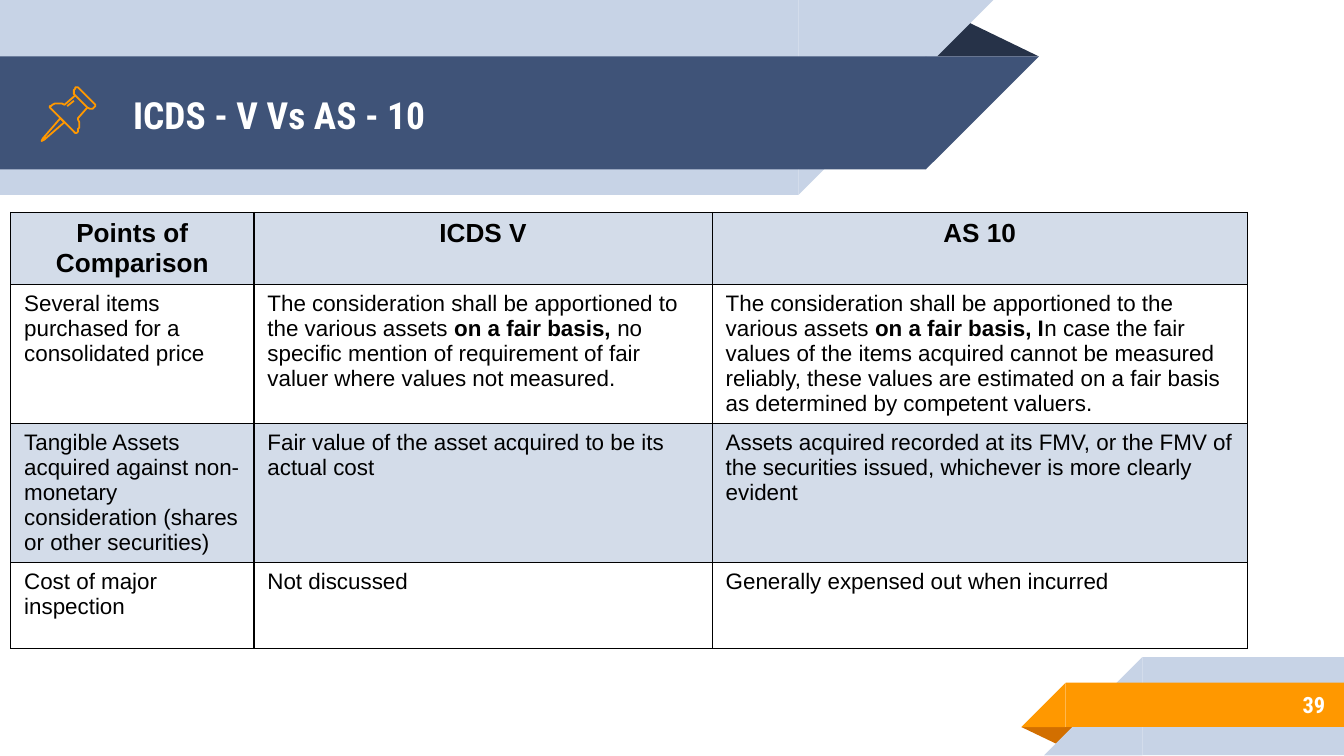
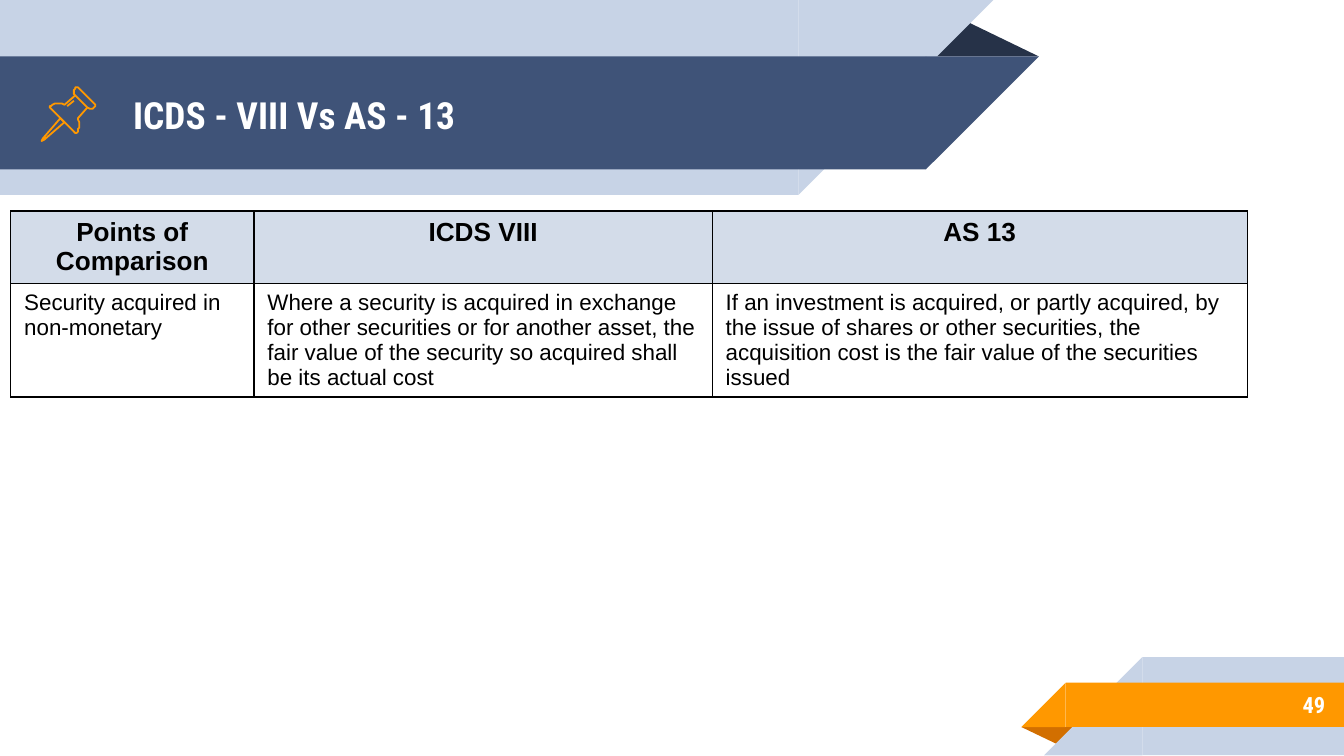
from dataclasses import dataclass
from typing import Any, NamedTuple

import pptx
import pptx.dml.color
import pptx.enum.shapes
import pptx.enum.text
import pptx.oxml
import pptx.oxml.ns
import pptx.util
from lxml import etree

KIND = pptx.enum.shapes.MSO_SHAPE
ALIGN = pptx.enum.text.PP_ALIGN
MIDDLE = pptx.enum.text.MSO_ANCHOR.MIDDLE

# Grid: 100 square columns across a 16:9 slide
WIDTH = pptx.util.Inches(10)
HEIGHT = WIDTH * 9 // 16
CELL = WIDTH / 100


@dataclass(frozen=True)
class Theme:
    pale: str = "C7D3E6"
    navy: str = "3F5378"
    dark: str = "263248"
    gold: str = "FF9800"
    rust: str = "D26F00"
    tint: str = "D3DCE9"
    white: str = "FFFFFF"
    black: str = "000000"
    brand: str = "Roboto Condensed"
    plain: str = "Arial"
    title: int = 20
    head: int = 14
    body: int = 12
    icon: float = 0.96
    rule: float = 0.75


THEME = Theme()


class Box(NamedTuple):
    """Left, top, width and height in grid cells."""
    left: float
    top: float
    wide: float
    high: float


class Part(NamedTuple):
    kind: Any
    box: Box
    fill: str
    turn: int = 0
    flip: bool = False


class Stroke(NamedTuple):
    """Points in tenths of a grid cell."""
    points: list[tuple[int, int]]
    closed: bool = False


class Page(NamedTuple):
    title: str
    number: str
    box: Box
    highs: list[float]
    rows: list[list[str]]


# Shared bands
def foot(kind: Any, box: Box, fill: str) -> Part:
    return Part(kind, box, fill, flip=True)


def top(kind: Any, box: Box, fill: str) -> Part:
    return Part(kind, box, fill, turn=180, flip=True)


FOOT = [
    Part(KIND.ISOSCELES_TRIANGLE, Box(76, 54.1, 4.3, 1.4), THEME.rust, turn=180),
    foot(KIND.RECTANGLE, Box(85, 48.9, 15, 7.3), THEME.pale),
    foot(KIND.RIGHT_TRIANGLE, Box(77.7, 48.9, 7.3, 7.3), THEME.pale),
    foot(KIND.RECTANGLE, Box(79.3, 50.8, 20.8, 3.3), THEME.gold),
    foot(KIND.RIGHT_TRIANGLE, Box(76, 50.8, 3.3, 3.3), THEME.gold),
]
HEAD = [
    Part(KIND.ISOSCELES_TRIANGLE, Box(68.8, 1.4, 8.5, 2.8), THEME.dark),
    top(KIND.RECTANGLE, Box(0, 0, 59.4, 14.5), THEME.pale),
    top(KIND.RIGHT_TRIANGLE, Box(59.4, 0, 14.5, 14.5), THEME.pale),
    top(KIND.RECTANGLE, Box(0, 4.2, 68.9, 8.4), THEME.navy),
    top(KIND.RIGHT_TRIANGLE, Box(68.9, 4.2, 8.4, 8.4), THEME.navy),
]
TITLE = Box(8.9, 4.3, 60.1, 8.4)
NUMBER = Box(83.3, 50.7, 16.3, 3.5)

# Push pin: needle, cap, body, shine
PIN = [
    Stroke([(45, 88), (32, 103), (31, 105), (33, 104), (48, 91)], True),
    Stroke([(56, 71), (65, 80), (67, 81), (69, 81), (70, 80), (71, 79),
            (71, 78), (58, 65), (57, 65), (56, 65), (56, 66), (55, 67),
            (55, 70)], True),
    Stroke([(56, 71), (48, 78), (46, 77), (44, 77), (41, 77), (39, 78),
            (38, 79), (37, 79), (37, 80), (38, 81), (55, 98), (56, 99),
            (57, 99), (58, 98), (58, 96), (59, 95), (59, 91), (58, 89),
            (58, 88), (65, 80)]),
    Stroke([(50, 79), (55, 75)]),
]

# Page content: ** switches bold on and off
COLS = [18.1, 34.1, 39.8]
POINTS = "Points of\nComparison"
PAGES = [
    Page("ICDS - V Vs AS - 10", "39", Box(0.8, 15.8, 92, 34.1),
         [4.1, 8.2, 4.1, 6.4], [
        [POINTS, "ICDS V", "AS 10"],
        ["Several items purchased for a consolidated price",
         "The consideration shall be apportioned to the various assets "
         "**on a fair basis, **no specific mention of requirement of fair "
         "valuer where values not measured.",
         "The consideration shall be apportioned to the various assets "
         "**on a fair basis, I**n case the fair values of the items acquired "
         "cannot be measured reliably, these values are estimated on a fair "
         "basis as determined by competent valuers."],
        ["Tangible Assets acquired against non-monetary consideration "
         "(shares or other securities)",
         "Fair value of the asset acquired to be its actual cost",
         "Assets acquired recorded at its FMV, or the FMV of the securities "
         "issued, whichever is more clearly evident"],
        ["Cost of major inspection", "Not discussed",
         "Generally expensed out when incurred"],
    ]),
    Page("ICDS - VIII Vs AS - 13", "49", Box(0.8, 15.7, 92, 14.7),
         [4.1, 8.2], [
        [POINTS, "ICDS VIII", "AS 13"],
        ["Security acquired in non-monetary",
         "Where a security is acquired in exchange for other securities or "
         "for another asset, the fair value of the security so acquired shall "
         "be its actual cost",
         "If an investment is acquired, or partly acquired, by the issue of "
         "shares or other securities, the acquisition cost is the fair value "
         "of the securities issued"],
    ]),
]


# Helpers
def span(cells: float) -> int:
    return round(cells * CELL)


def place(box: Box) -> tuple[int, ...]:
    return tuple(span(side) for side in box)


def tone(code: str) -> Any:
    return pptx.dml.color.RGBColor.from_string(code)


def write(frame: Any, text: str, *, size: int, font: str, color: str,
          bold: bool = False, align: Any = ALIGN.LEFT) -> None:
    for row, line in enumerate(text.split("\n")):
        para = frame.add_paragraph() if row else frame.paragraphs[0]
        para.alignment = align
        for turn, piece in enumerate(line.split("**")):
            run = para.add_run()
            run.text = piece
            run.font.size = pptx.util.Pt(size)
            run.font.name = font
            run.font.bold = bold or turn % 2 == 1
            run.font.color.rgb = tone(color)


def label(shape: Any, box: Box, text: str, size: int, align: Any) -> None:
    shape.left, shape.top, shape.width, shape.height = place(box)
    frame = shape.text_frame
    frame.word_wrap = True
    frame.auto_size = pptx.enum.text.MSO_AUTO_SIZE.NONE
    frame.vertical_anchor = MIDDLE
    frame.margin_left = frame.margin_right = span(1)
    frame.margin_top = frame.margin_bottom = span(1)
    write(frame, text, size=size, font=THEME.brand, color=THEME.white,
          bold=True, align=align)


def draw_band(slide: Any, parts: list[Part]) -> None:
    group = slide.shapes.add_group_shape()
    for part in parts:
        shape = group.shapes.add_shape(part.kind, *place(part.box))
        shape.shadow.inherit = False
        shape.fill.solid()
        shape.fill.fore_color.rgb = tone(part.fill)
        shape.line.fill.background()
        shape.rotation = part.turn
        if part.kind == KIND.ISOSCELES_TRIANGLE:
            shape.adjustments[0] = 0.32
        if part.flip:
            frame = shape.element.spPr.find(pptx.oxml.ns.qn("a:xfrm"))
            frame.set("flipH", "1")


def draw_pin(slide: Any) -> None:
    group = slide.shapes.add_group_shape()
    for stroke in PIN:
        start, *rest = stroke.points
        pen = group.shapes.build_freeform(*start, scale=CELL / 10)
        pen.add_line_segments(rest, close=stroke.closed)
        shape = pen.convert_to_shape()
        shape.shadow.inherit = False
        shape.fill.background()
        shape.line.color.rgb = tone(THEME.gold)
        shape.line.width = pptx.util.Pt(THEME.icon)


def edge(cell: Any) -> None:
    qn = pptx.oxml.ns.qn
    props = cell._tc.get_or_add_tcPr()
    for side in ("a:lnL", "a:lnR", "a:lnT", "a:lnB"):
        line = etree.SubElement(props, qn(side),
                                w=str(pptx.util.Pt(THEME.rule)))
        fill = etree.SubElement(line, qn("a:solidFill"))
        etree.SubElement(fill, qn("a:srgbClr"), val=THEME.black)


def draw_table(slide: Any, page: Page) -> None:
    frame = slide.shapes.add_table(len(page.rows), len(COLS), *place(page.box))
    table = frame.table
    table.first_row = table.horz_banding = False
    for col, wide in zip(table.columns, COLS):
        col.width = span(wide)
    for row, high in zip(table.rows, page.highs):
        row.height = span(high)
    frame.height = span(page.box.high)
    for r, texts in enumerate(page.rows):
        head = r == 0
        for c, text in enumerate(texts):
            cell = table.cell(r, c)
            edge(cell)
            if r % 2 == 0:
                cell.fill.solid()
                cell.fill.fore_color.rgb = tone(THEME.tint)
            else:
                cell.fill.background()
            write(cell.text_frame, text, font=THEME.plain, color=THEME.black,
                  size=THEME.head if head else THEME.body, bold=head,
                  align=ALIGN.CENTER if head else ALIGN.LEFT)


def draw_page(deck: Any, page: Page) -> None:
    slide = deck.slides.add_slide(deck.slide_layouts[5])
    draw_band(slide, FOOT)
    draw_band(slide, HEAD)
    # Raise the title above the bands
    title = slide.shapes.title
    title.element.getparent().append(title.element)
    label(title, TITLE, page.title, THEME.title, ALIGN.LEFT)
    number = slide.shapes.add_textbox(*place(NUMBER))
    label(number, NUMBER, page.number, THEME.body, ALIGN.RIGHT)
    draw_pin(slide)
    draw_table(slide, page)


def main() -> None:
    deck = pptx.Presentation()
    deck.slide_width, deck.slide_height = WIDTH, HEIGHT
    for page in PAGES:
        draw_page(deck, page)
    deck.save("out.pptx")


if __name__ == "__main__":
    main()
